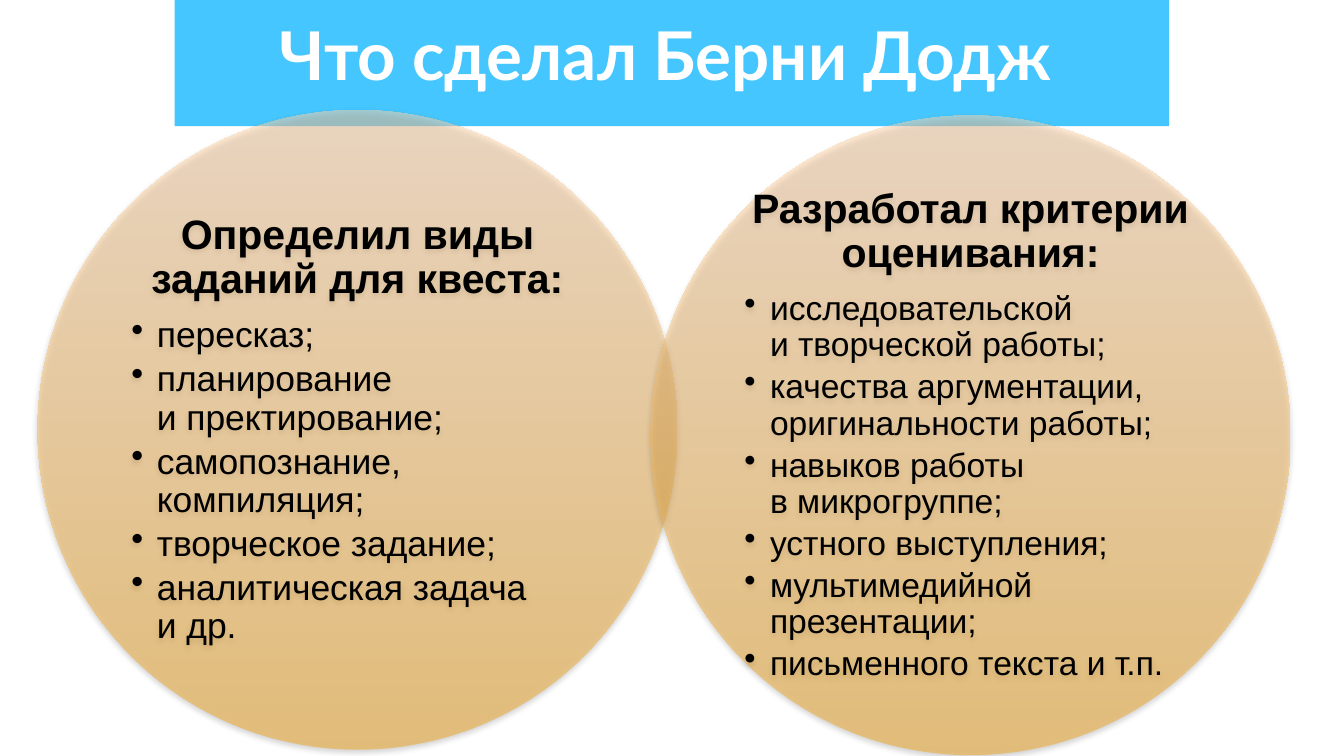
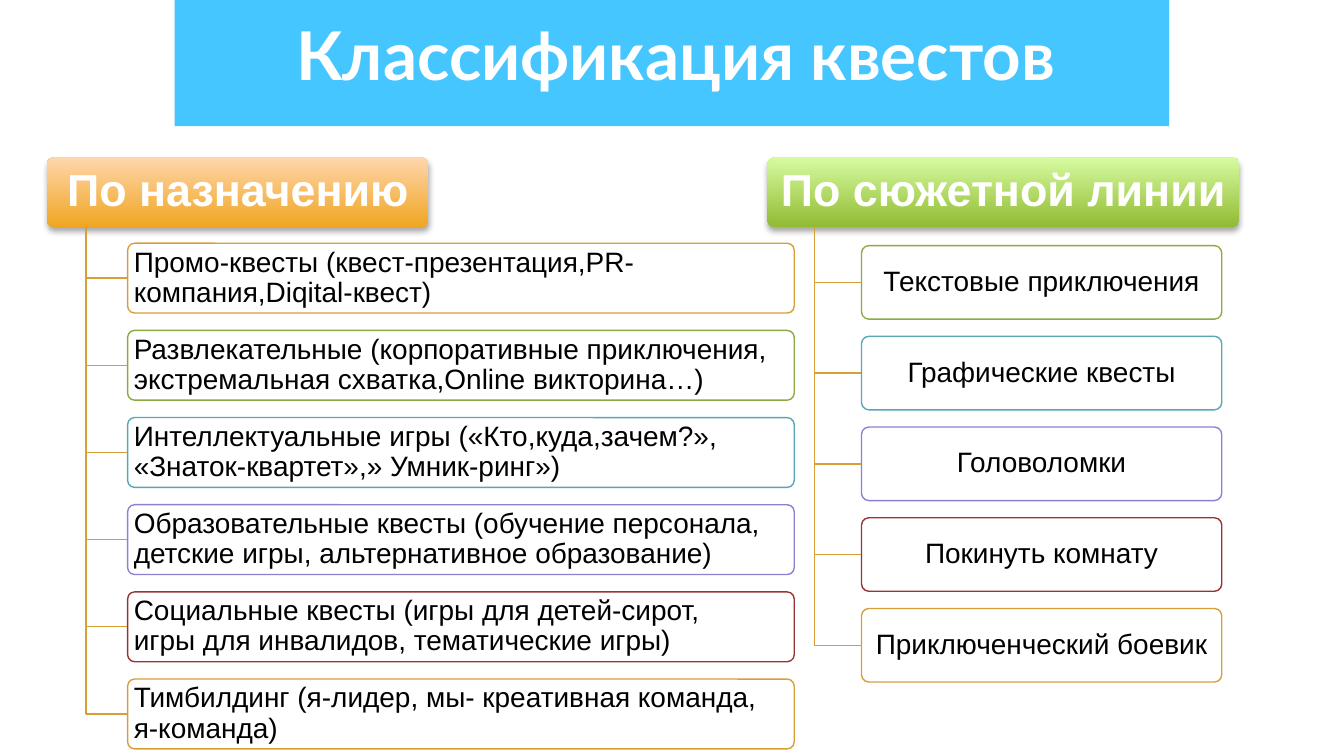
from copy import deepcopy

from lxml import etree
from pptx import Presentation
from pptx.dml.color import RGBColor
from pptx.enum import shapes, text
from pptx.oxml import ns
from pptx.util import Pt

WHITE = RGBColor(0xFF, 0xFF, 0xFF)
BLACK = RGBColor(0x00, 0x00, 0x00)
BLUE = RGBColor(0x00, 0xB2, 0xFF)
AMBER = RGBColor(0xF0, 0xA6, 0x21)
PEACH = RGBColor(0xFF, 0xD6, 0xAD)
LEAF = RGBColor(0x91, 0xBB, 0x32)
LIME = RGBColor(0xD6, 0xFB, 0xA0)
GOLD = RGBColor(0xD8, 0x9F, 0x39)
GREEN = RGBColor(0x8B, 0xAB, 0x42)
TEAL = RGBColor(0x57, 0xA7, 0xB5)
VIOLET = RGBColor(0x8B, 0x81, 0xD2)
RED = RGBColor(0x96, 0x33, 0x34)
EDGES = [GOLD, GREEN, TEAL, VIOLET, RED]

KIND = shapes.MSO_SHAPE
LEFT, MID = text.PP_ALIGN.LEFT, text.PP_ALIGN.CENTER
HEAD = {"name": "Arial", "size": Pt(22), "bold": True}
TOP = {"name": "Arial", "size": Pt(24), "bold": True}
ITEM = {"name": "Arial", "size": Pt(15), "bold": False}
TITLE = {"name": "Lato", "size": Pt(36), "bold": True}


def draw(slide, kind, box, fills, alpha=100, edge=None, pad=(0, 0)):
    """Add a shape; two fill colours make a shaded, shadowed one (bottom, top)."""
    shape = slide.shapes.add_shape(kind, *map(Pt, box))
    shape.shadow.inherit = False
    if kind == KIND.ROUNDED_RECTANGLE:
        shape.adjustments[0] = 0.1
    if len(fills) == 2:
        shape.fill.gradient()
        shape.fill.gradient_angle = 90
        for stop, tint in zip(shape.fill.gradient_stops, fills):
            stop.color.rgb = tint
    else:
        shape.fill.solid()
        shape.fill.fore_color.rgb = fills[0]
    props = shape._element.spPr
    if alpha < 100:
        for tint in props.findall(".//" + ns.qn("a:srgbClr")):
            etree.SubElement(tint, ns.qn("a:alpha"), val=str(alpha * 1000))
    if len(fills) == 2:
        glow = etree.SubElement(props.find(ns.qn("a:effectLst")), ns.qn("a:outerShdw"),
                                blurRad=str(Pt(3.1)), dist=str(Pt(1.8)),
                                dir="5400000", rotWithShape="0")
        tint = etree.SubElement(glow, ns.qn("a:srgbClr"), val="000000")
        etree.SubElement(tint, ns.qn("a:alpha"), val="35000")
    if edge:
        shape.line.color.rgb = edge
        shape.line.width = Pt(0.75)
    else:
        shape.line.fill.background()
    frame = shape.text_frame
    frame.word_wrap = True
    frame.vertical_anchor = text.MSO_ANCHOR.MIDDLE
    frame.margin_left = frame.margin_right = Pt(pad[0])
    frame.margin_top = frame.margin_bottom = Pt(pad[1])
    return shape


def write(para, words, font, tint, align=MID, **form):
    para.text = words
    para.alignment = align
    for key, val in form.items():
        setattr(para, key, val)
    for run in para.runs:
        for key, val in font.items():
            setattr(run.font, key, val)
        run.font.color.rgb = tint
    for gap in para._p.findall(ns.qn("a:br")):
        gap.append(deepcopy(para.runs[0]._r.rPr))


deck = Presentation()
deck.slide_width, deck.slide_height = Pt(720), Pt(405)

# Title band on every slide
pages = []
for name, left, width in [("Что сделал Берни Додж", 91, 531),
                          ("Классификация квестов", 65, 594)]:
    page = deck.slides.add_slide(deck.slide_layouts[6])
    draw(page, KIND.RECTANGLE, (93.6, 0, 532.8, 67.7), [BLUE], 73)
    frame = page.shapes.add_textbox(Pt(left), 0, Pt(width), Pt(67.7)).text_frame
    frame.word_wrap = True
    frame.margin_left = frame.margin_right = Pt(7.2)
    frame.margin_top = frame.margin_bottom = Pt(7.2)
    write(frame.paragraphs[0], name, TITLE, WHITE)
    pages.append(page)

# Slide 1: two overlapping circles
circles = [
    (20.2, 59, 19, "Определил виды заданий для квеста:",
     ["пересказ;", "планирование\nи пректирование;", "самопознание, компиляция;",
      "творческое задание;", "аналитическая задача\nи др."]),
    (348.7, 61.9, 18, "Разработал критерии оценивания:",
     ["исследовательской\nи творческой работы;",
      "качества аргументации, оригинальности работы;",
      "навыков работы\nв микрогруппе;", "устного выступления;",
      "мультимедийной презентации;", "письменного текста и т.п."]),
]
for left, top, size, head, points in circles:
    ring = draw(pages[0], KIND.OVAL, (left, top, 342.7, 342.7), [AMBER, PEACH], 50)
    frame = ring.text_frame
    write(frame.paragraphs[0], head, HEAD, BLACK, line_spacing=0.9, space_after=Pt(8))
    for point in points:
        para = frame.add_paragraph()
        props = para._p.get_or_add_pPr()
        props.set("marL", str(Pt(13.7)))
        props.set("indent", str(-Pt(13.7)))
        etree.SubElement(props, ns.qn("a:buChar"), char="•")
        write(para, point, {**ITEM, "size": Pt(size)}, BLACK, LEFT,
              level=1, line_spacing=0.9, space_after=Pt(3))

# Slide 2: two trees; each row is header box, fills, stem, first item box, step, colour start
trees = [
    ("По назначению", (25.2, 84.4, 204.5, 37.4), [AMBER, PEACH], 46.1,
     (68.4, 130.3, 357.1, 37.4), 46.7, 0, LEFT,
     ["Промо-квесты (квест-презентация,PR-компания,Diqital-квест)",
      "Развлекательные (корпоративные приключения, экстремальная схватка,Online викторина…)",
      "Интеллектуальные игры («Кто,куда,зачем?», «Знаток-квартет»,» Умник-ринг»)",
      "Образовательные квесты (обучение персонала, детские игры, альтернативное образование)",
      "Социальные квесты (игры для детей-сирот,\nигры для инвалидов, тематические игры)",
      "Тимбилдинг (я-лидер, мы- креативная команда,\nя-команда)"]),
    ("По сюжетной линии", (411.1, 84.4, 252.7, 37.4), [LEAF, LIME], 436.3,
     (461.5, 131.6, 193, 39.4), 48.6, 1, MID,
     ["Текстовые приключения", "Графические квесты", "Головоломки",
      "Покинуть комнату", "Приключенческий боевик"]),
]
for head, box, fills, stem, first, step, start, align, items in trees:
    top = draw(pages[1], KIND.ROUNDED_RECTANGLE, box, fills, pad=(3.6, 2.2))
    write(top.text_frame.paragraphs[0], head, TOP, WHITE, line_spacing=0.9)
    base = box[1] + box[3]
    left, y, width, height = first
    for i, item in enumerate(items):
        row = y + i * step
        mid = row + height / 2
        pen = pages[1].shapes.build_freeform(Pt(stem), Pt(base))
        pen.add_line_segments([(Pt(stem), Pt(mid)), (Pt(left), Pt(mid))], close=False)
        branch = pen.convert_to_shape()
        branch.shadow.inherit = False
        branch.fill.background()
        branch.line.color.rgb = GOLD
        branch.line.width = Pt(0.75)
        card = draw(pages[1], KIND.ROUNDED_RECTANGLE, (left, row, width, height), [WHITE], 90,
                    EDGES[(i + start) % len(EDGES)], (2.2, 1.4))
        write(card.text_frame.paragraphs[0], item, ITEM, BLACK, align, line_spacing=0.9)

deck.save("out.pptx")
